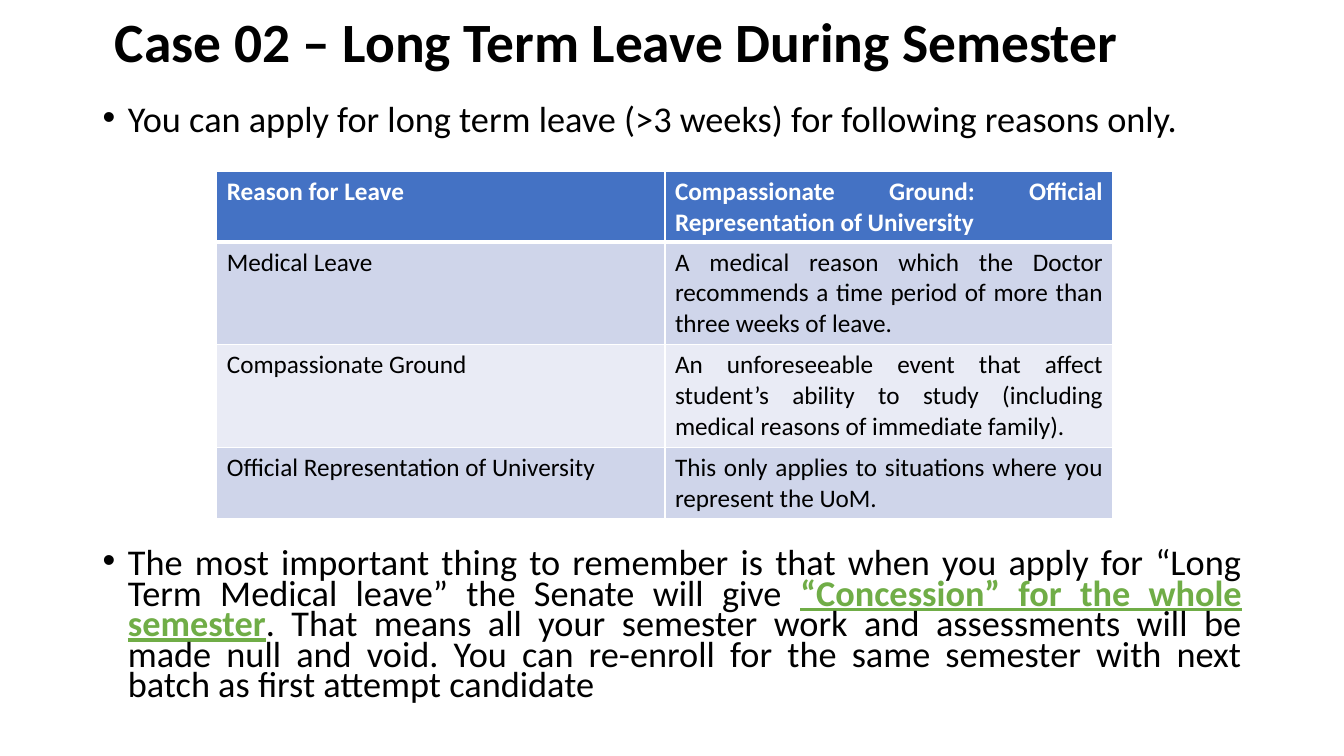
from lxml.etree import SubElement
from pptx import Presentation
from pptx.dml.color import RGBColor
from pptx.enum.text import MSO_ANCHOR as Anchor, MSO_AUTO_SIZE as AutoSize, PP_ALIGN as Align
from pptx.oxml.ns import qn
from pptx.util import Inches, Pt

COLORS = {
    "text": "000000",
    "white": "FFFFFF",
    "accent": "70AD47",
    "header": "4472C4",
    "odd_row": "CFD5EA",
    "even_row": "E9EBF5",
}
PLAIN = {"color": "text", "bold": False, "underline": False}
HIGHLIGHT = {"color": "accent", "bold": True, "underline": True}

TITLE = "Case 02 – Long Term Leave During Semester"
REASONS = [
    ("Reason for Leave", "Compassionate Ground: Official Representation of University"),
    ("Medical Leave", "A medical reason which the Doctor recommends a time period "
     "of more than three weeks of leave."),
    ("Compassionate Ground", "An unforeseeable event that affect student’s ability to study "
     "(including medical reasons of immediate family)."),
    ("Official Representation of University", "This only applies to situations where you "
     "represent the UoM."),
]
ROW_HEIGHTS = [0.7, 1.02, 1.02, 0.7]
# Each bullet: paragraph format, then its runs; the second sits below the table
BULLETS = [
    ({"space_before": Pt(10), "alignment": Align.LEFT},
     [("You can apply for long term leave (>3 weeks) for following reasons only.", PLAIN)]),
    ({"space_before": Pt(295), "alignment": Align.JUSTIFY},
     [("The most important thing to remember is that when you apply for “Long Term Medical "
       "leave” the Senate will give ", PLAIN),
      ("“Concession” for the whole semester", HIGHLIGHT),
      (". That means all your semester work and assessments will be made null and void. You can "
       "re-enroll for the same semester with next batch as first attempt candidate", PLAIN)]),
]


class SlideBuilder:
    """Holds the style and the current slide."""

    font_name = "Calibri"

    def __init__(self, presentation):
        self.slide = presentation.slides.add_slide(presentation.slide_layouts[5])

    def apply(self, target, values):
        for name, value in values.items():
            setattr(target, name, value)

    def place(self, shape, left, top, width, height):
        self.apply(shape, {"left": Inches(left), "top": Inches(top),
                           "width": Inches(width), "height": Inches(height)})

    def run(self, paragraph, text, size, color="text", **font_format):
        run = paragraph.add_run()
        run.text = text
        self.apply(run.font, {"name": self.font_name, "size": Pt(size), **font_format})
        run.font.color.rgb = RGBColor.from_string(COLORS[color])

    def title(self, text, box):
        shape = self.slide.shapes.title
        self.place(shape, *box)
        self.apply(shape.text_frame, {"vertical_anchor": Anchor.MIDDLE, "word_wrap": True,
                                      "auto_size": AutoSize.NONE})
        paragraph = shape.text_frame.paragraphs[0]
        self.apply(paragraph, {"alignment": Align.LEFT, "line_spacing": 0.9})
        self.run(paragraph, text, 39.6, bold=True)

    def bullets(self, items, box):
        shape = self.slide.shapes.add_textbox(*map(Inches, box))
        frame = shape.text_frame
        frame.word_wrap = True
        for index, (paragraph_format, runs) in enumerate(items):
            paragraph = frame.add_paragraph() if index else frame.paragraphs[0]
            self.apply(paragraph, {"line_spacing": 0.7, **paragraph_format})
            properties = paragraph._p.get_or_add_pPr()
            properties.set("marL", str(Inches(0.25)))
            properties.set("indent", str(Inches(-0.25)))
            SubElement(properties, qn("a:buFont"), typeface="Arial")
            SubElement(properties, qn("a:buChar"), char="•")
            for text, style in runs:
                self.run(paragraph, text, 25.9, **style)

    def borders(self, cell, widths):
        properties = cell._tc.get_or_add_tcPr()
        for side, width in widths.items():
            line = SubElement(properties, qn(f"a:ln{side}"), w=str(Pt(width)))
            fill = SubElement(line, qn("a:solidFill"))
            SubElement(fill, qn("a:srgbClr"), val=COLORS["white"])

    def table(self, rows, row_heights, box):
        frame = self.slide.shapes.add_table(len(rows), len(rows[0]), *map(Inches, box))
        table = frame.table
        for row_index, texts in enumerate(rows):
            table.rows[row_index].height = Inches(row_heights[row_index])
            is_header = row_index == 0
            fill = "header" if is_header else ("odd_row" if row_index % 2 else "even_row")
            for column_index, text in enumerate(texts):
                cell = table.cell(row_index, column_index)
                self.borders(cell, {"L": 1, "R": 1, "T": 3 if row_index == 1 else 1,
                                    "B": 3 if is_header else 1})
                cell.fill.solid()
                cell.fill.fore_color.rgb = RGBColor.from_string(COLORS[fill])
                paragraph = cell.text_frame.paragraphs[0]
                paragraph.alignment = Align.JUSTIFY
                self.run(paragraph, text, 18, "white" if is_header else "text", bold=is_header)


def main():
    presentation = Presentation()
    presentation.slide_width = Inches(13.33)
    presentation.slide_height = Inches(7.5)
    builder = SlideBuilder(presentation)

    # Heading, bullets around the table, and the table of reasons
    builder.title(TITLE, (1.04, 0.16, 11.5, 0.56))
    builder.bullets(BULLETS, (0.92, 1.02, 11.5, 6.14))
    builder.table(REASONS, ROW_HEIGHTS, (2.15, 1.7, 8.89, sum(ROW_HEIGHTS)))

    presentation.save("out.pptx")


if __name__ == "__main__":
    main()
